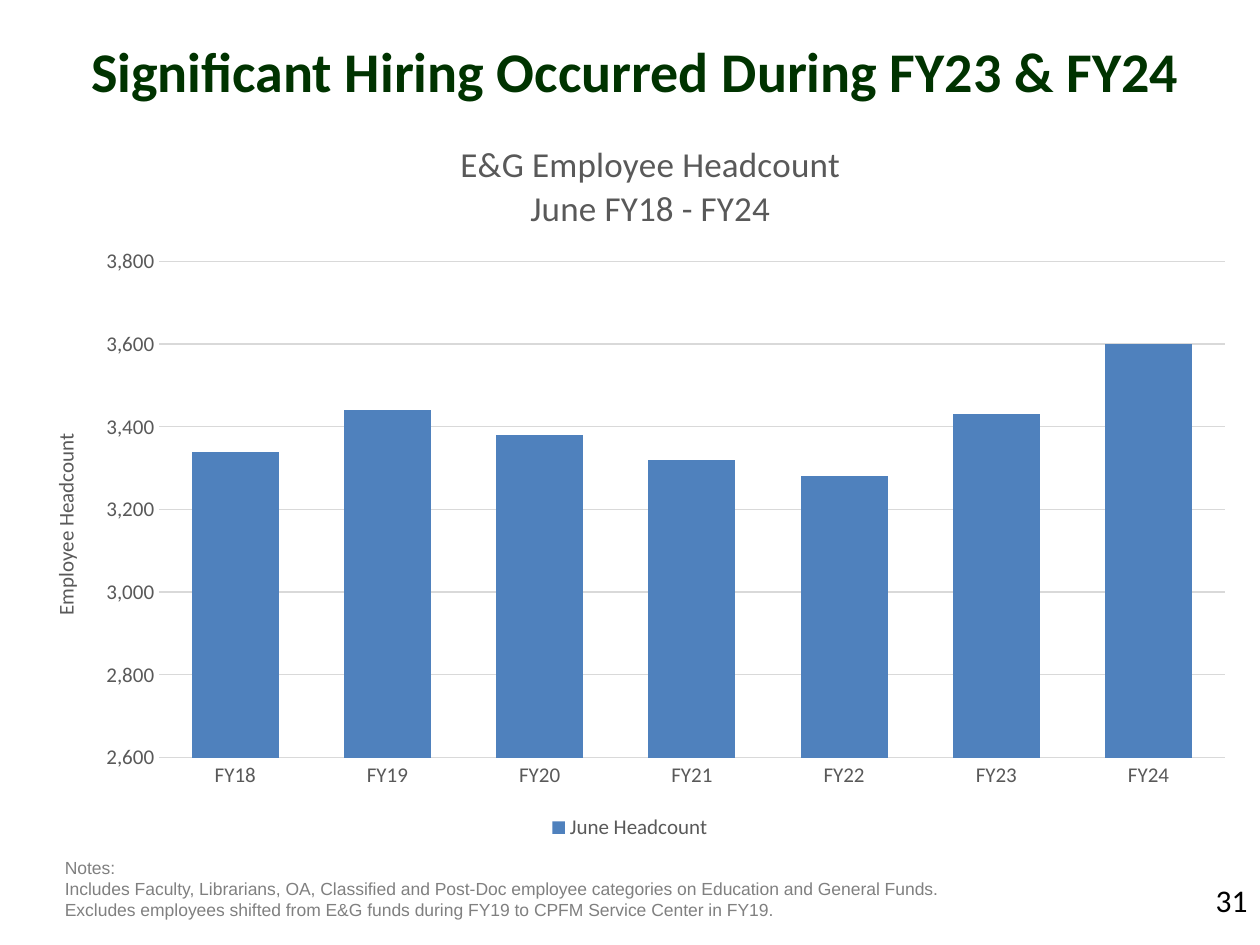
from dataclasses import dataclass

from lxml import etree
from pptx import Presentation
from pptx.chart.data import CategoryChartData
from pptx.dml.color import RGBColor
from pptx.enum.chart import XL_CHART_TYPE, XL_LEGEND_POSITION, XL_TICK_MARK
from pptx.enum.text import MSO_ANCHOR, PP_ALIGN
from pptx.oxml.ns import qn
from pptx.util import Pt

COLUMN = XL_CHART_TYPE.COLUMN_CLUSTERED
BOTTOM = XL_LEGEND_POSITION.BOTTOM
NO_TICK = XL_TICK_MARK.NONE
TOP, MIDDLE = MSO_ANCHOR.TOP, MSO_ANCHOR.MIDDLE
LEFT, CENTER, RIGHT = PP_ALIGN.LEFT, PP_ALIGN.CENTER, PP_ALIGN.RIGHT


@dataclass(frozen=True)
class Theme:
    heading: str = "003300"
    note: str = "808080"
    number: str = "000000"
    chart_text: str = "595959"
    grid: str = "D9D9D9"
    bar: str = "4F81BD"
    body_font: str = "Calibri"
    note_font: str = "Arial"
    heading_size: int = 32
    chart_title_size: int = 20
    number_size: int = 18
    axis_size: int = 12
    note_size: int = 10


T = Theme()
HEADCOUNT = {
    "FY18": 3340, "FY19": 3440, "FY20": 3380, "FY21": 3320,
    "FY22": 3280, "FY23": 3430, "FY24": 3600,
}
NOTES = [
    "Notes:",
    "Includes Faculty, Librarians, OA, Classified and Post-Doc employee categories on Education and General Funds.",
    "Excludes employees shifted from E&G funds during FY19 to CPFM Service Center in FY19.",
]


def set_attrs(obj, values):
    for name, value in values.items():
        setattr(obj, name, value)


def format_font(font, size, color, name=T.body_font, bold=False):
    set_attrs(font, {"size": Pt(size), "name": name, "bold": bold})
    font.color.rgb = RGBColor.from_string(color)


def format_line(line, color):
    line.width = Pt(0.75)
    line.color.rgb = RGBColor.from_string(color)


def place(shape, left, top, width, height):
    set_attrs(shape, {"left": Pt(left), "top": Pt(top),
                      "width": Pt(width), "height": Pt(height)})


def write_lines(tf, lines, align, **font):
    for i, text in enumerate(lines):
        p = tf.paragraphs[0] if i == 0 else tf.add_paragraph()
        p.alignment = align
        r = p.add_run()
        r.text = text
        format_font(r.font, **font)


def add_title(s, text):
    sp = s.shapes.title
    place(sp, 24, -4, 678, 88)
    set_attrs(sp.text_frame, {"word_wrap": True, "vertical_anchor": MIDDLE})
    write_lines(sp.text_frame, [text], CENTER,
                size=T.heading_size, color=T.heading, bold=True)


def add_text(s, box, lines, align, **font):
    sp = s.shapes.add_textbox(*map(Pt, box))
    set_attrs(sp.text_frame, {"word_wrap": True, "vertical_anchor": TOP})
    write_lines(sp.text_frame, lines, align, **font)


def set_layout(parent, index, **values):
    old = parent.find(qn("c:layout"))
    if old is not None:
        parent.remove(old)
    layout = etree.Element(qn("c:layout"))
    manual = etree.SubElement(layout, qn("c:manualLayout"))
    for name, value in values.items():
        etree.SubElement(manual, qn(f"c:{name}"), val=str(value))
    parent.insert(index, layout)


def set_chart_title(title, lines, size, x, y):
    write_lines(title.text_frame, lines, CENTER, size=size, color=T.chart_text)
    set_layout(title._element, 1, xMode="edge", yMode="edge", x=x, y=y)


def format_axes(chart):
    cat, val = chart.category_axis, chart.value_axis
    for axis in (cat, val):
        set_attrs(axis, {"major_tick_mark": NO_TICK, "minor_tick_mark": NO_TICK})
        format_font(axis.tick_labels.font, T.axis_size, T.chart_text)
    format_line(cat.format.line, T.grid)
    val.format.line.fill.background()
    set_attrs(val, {"minimum_scale": 2600, "maximum_scale": 3800,
                    "major_unit": 200, "has_major_gridlines": True})
    format_line(val.major_gridlines.format.line, T.grid)
    set_attrs(val.tick_labels, {"number_format": "#,##0",
                                "number_format_is_linked": False})
    title = val.axis_title
    set_chart_title(title, ["Employee Headcount"], T.axis_size, 0.03, 0.43)
    title.text_frame._txBody.find(qn("a:bodyPr")).set("rot", "-5400000")


def add_headcount_chart(s):
    data = CategoryChartData(number_format="#,##0")
    data.categories = list(HEADCOUNT)
    data.add_series("June Headcount", list(HEADCOUNT.values()))
    chart = s.shapes.add_chart(COLUMN, *map(Pt, (6, 66, 708, 417)), data).chart
    format_font(chart.font, T.note_size, T.number)
    chart.has_title = True
    set_chart_title(chart.chart_title, ["E&G Employee Headcount", "June FY18 - FY24"],
                    T.chart_title_size, 0.36, 0.03)
    format_axes(chart)
    set_attrs(chart.plots[0], {"gap_width": 75, "vary_by_categories": False})
    fill = chart.series[0].format.fill
    fill.solid()
    fill.fore_color.rgb = RGBColor.from_string(T.bar)
    chart.has_legend = True
    set_attrs(chart.legend, {"position": BOTTOM, "include_in_layout": False})
    format_font(chart.legend.font, T.axis_size, T.chart_text)
    plot_area = chart._chartSpace.find(".//" + qn("c:plotArea"))
    set_layout(plot_area, 0, layoutTarget="inner", xMode="edge", yMode="edge",
               x=0.12, y=0.2, w=0.86, h=0.68)


def main():
    prs = Presentation()
    set_attrs(prs, {"slide_width": Pt(720), "slide_height": Pt(540)})
    s = prs.slides.add_slide(prs.slide_layouts[5])
    add_text(s, (30, 486, 522, 44), NOTES, LEFT,
             size=T.note_size, color=T.note, name=T.note_font)
    add_title(s, "Significant Hiring Occurred During FY23 & FY24")
    add_headcount_chart(s)
    add_text(s, (552, 500, 168, 29), ["31"], RIGHT,
             size=T.number_size, color=T.number)
    prs.save("out.pptx")


if __name__ == "__main__":
    main()
